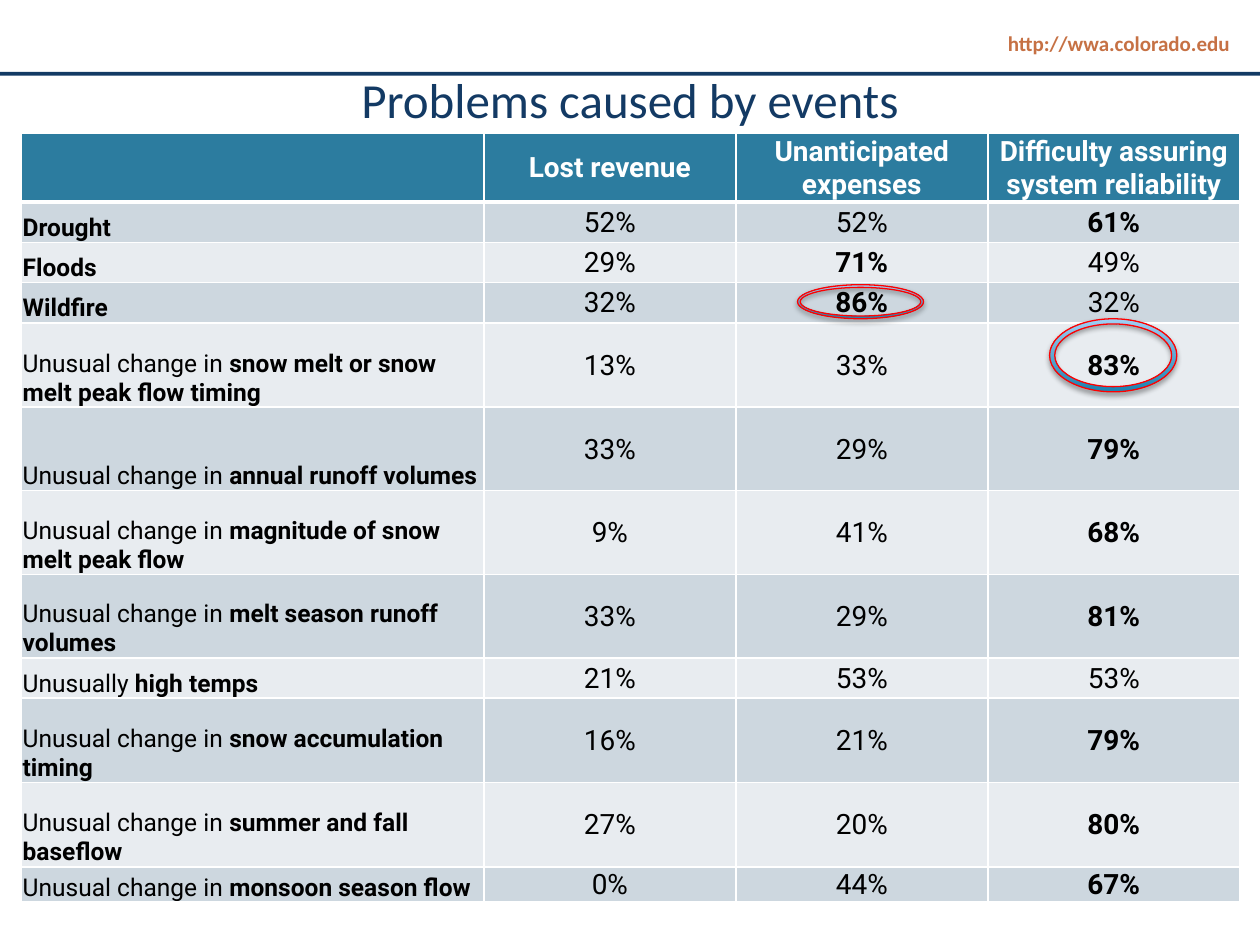
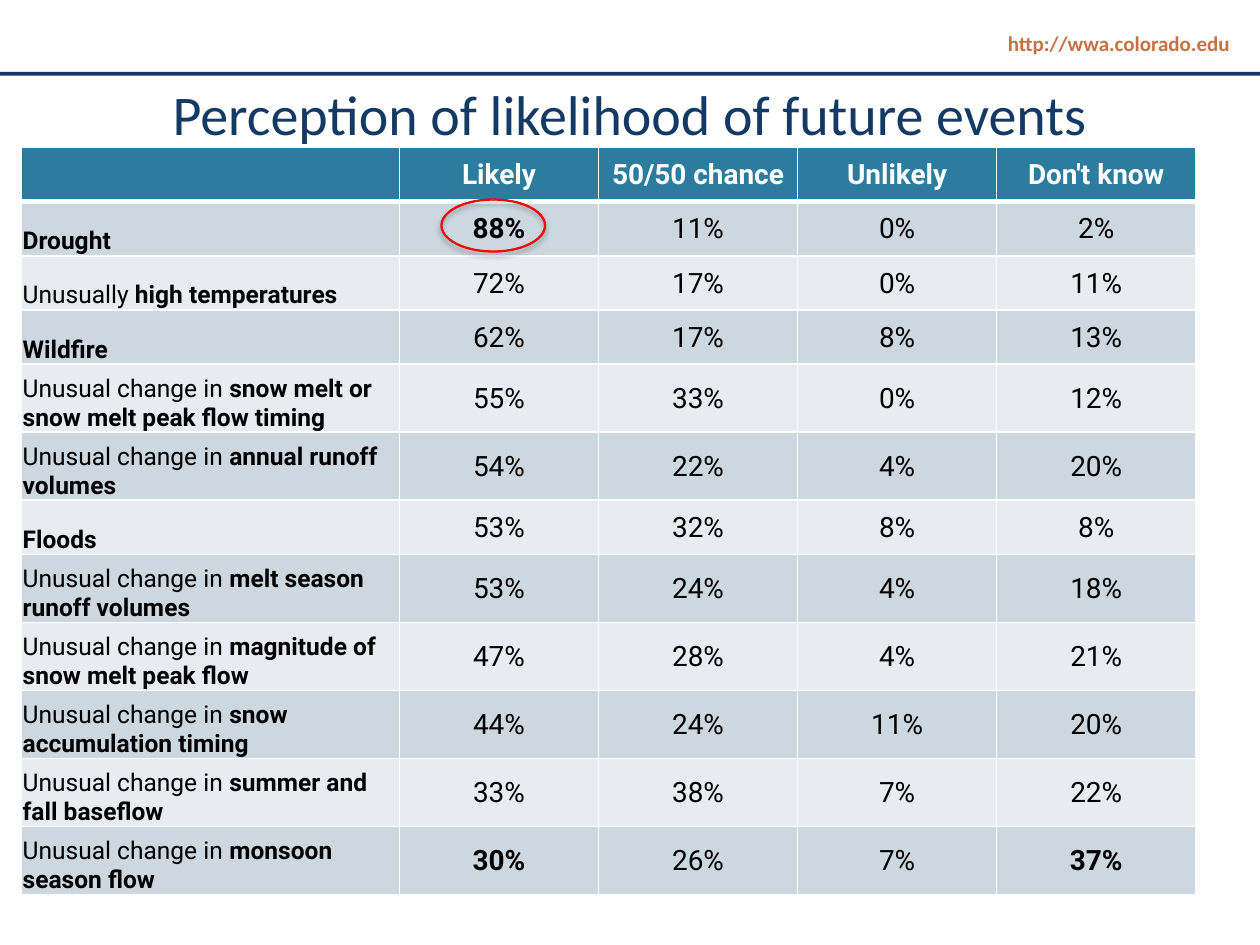
from pptx import Presentation
from pptx.dml.color import RGBColor as RGB
from pptx.enum.shapes import MSO_SHAPE as SHAPE
from pptx.enum.text import MSO_ANCHOR as ANCHOR, PP_ALIGN as ALIGN
from pptx.oxml import parse_xml
from pptx.oxml.ns import nsdecls
from pptx.util import Inches, Pt

NAVY = RGB(0x13, 0x3A, 0x64)
RUST = RGB(0xC6, 0x71, 0x44)
TEAL = RGB(0x2C, 0x7C, 0x9F)
BANDS = RGB(0xCD, 0xD7, 0xDF), RGB(0xE8, 0xEC, 0xF0)
RING_BLUES = RGB(0x1B, 0x83, 0xB0), RGB(0xA0, 0xCF, 0xF4)
RED = RGB(0xFF, 0, 0)
WHITE = RGB(0xFF, 0xFF, 0xFF)
BLACK = RGB(0, 0, 0)
HEAD_FONT, TABLE_FONT = "Calibri", "Roboto"
SITE = "http://wwa.colorado.edu"
CHANGE = "Unusual change in "

# Each row: plain label, bold label, values; a leading * marks a bold value.
SLIDES = [
    {
        "title": "Problems caused by events", "size": 28,
        "title_box": (0.5, 0.5, 9, 5.92),
        "table_at": (0.17, 1.06),
        "cols": [3.67, 2, 2, 2],
        "heights": [0.53] + [0.32] * 3 + [0.67, 0.66] * 2 + [0.32, 0.67, 0.67, 0.28],
        "header": ["Lost revenue", "Unanticipated expenses",
                   "Difficulty assuring system reliability"],
        "rows": [
            ("", "Drought", "52% 52% *61%"),
            ("", "Floods", "29% *71% 49%"),
            ("", "Wildfire", "32% *86% 32%"),
            (CHANGE, "snow melt or snow melt peak flow timing", "13% 33% *83%"),
            (CHANGE, "annual runoff volumes", "33% 29% *79%"),
            (CHANGE, "magnitude of snow melt peak flow", "9% 41% *68%"),
            (CHANGE, "melt season runoff volumes", "33% 29% *81%"),
            ("Unusually ", "high temps", "21% 53% 53%"),
            (CHANGE, "snow accumulation timing", "16% 21% *79%"),
            (CHANGE, "summer and fall baseflow", "27% 20% *80%"),
            (CHANGE, "monsoon season flow", "0% 44% *67%"),
        ],
        "rings": [((6.33, 2.26, 1, 0.27), 0.079), ((8.33, 2.53, 1.01, 0.58), 0.071)],
    },
    {
        "title": "Perception of likelihood of future events", "size": 32,
        "title_box": (0.5, 0.58, 9, 5.83),
        "table_at": (0.17, 1.17),
        "cols": [3] + [1.58] * 4,
        "heights": [0.43] * 4 + [0.54] * 2 + [0.43] + [0.54] * 5,
        "header": ["Likely", "50/50 chance", "Unlikely", "Don't know"],
        "rows": [
            ("", "Drought", "*88% 11% 0% 2%"),
            ("Unusually ", "high temperatures", "72% 17% 0% 11%"),
            ("", "Wildfire", "62% 17% 8% 13%"),
            (CHANGE, "snow melt or snow melt peak flow timing", "55% 33% 0% 12%"),
            (CHANGE, "annual runoff volumes", "54% 22% 4% 20%"),
            ("", "Floods", "53% 32% 8% 8%"),
            (CHANGE, "melt season runoff volumes", "53% 24% 4% 18%"),
            (CHANGE, "magnitude of snow melt peak flow", "47% 28% 4% 21%"),
            (CHANGE, "snow accumulation timing", "44% 24% 11% 20%"),
            (CHANGE, "summer and fall baseflow", "33% 38% 7% 22%"),
            (CHANGE, "monsoon season flow", "*30% 26% 7% *37%"),
        ],
        "rings": [((3.5, 1.58, 0.83, 0.42), 0.018)],
    },
]


def inches(box):
    return [Inches(v) for v in box]


def add_run(p, text, font, size, color, bold=False):
    r = p.add_run()
    r.text = text
    r.font.name, r.font.size, r.font.bold = font, Pt(size), bold
    r.font.color.rgb = color


def add_text(slide, box, text, size, color, align, bold=False):
    tf = slide.shapes.add_textbox(*inches(box)).text_frame
    tf.word_wrap = True
    p = tf.paragraphs[0]
    p.alignment = align
    add_run(p, text, HEAD_FONT, size, color, bold)


def add_frame(slide):
    add_text(slide, (7.05, 0.19, 2.81, 0.3), SITE, 12, RUST, ALIGN.RIGHT, True)
    rule = slide.shapes.add_shape(SHAPE.RECTANGLE, *inches((0, 0.57, 10, 0.03)))
    rule.shadow.inherit = False
    rule.fill.solid()
    rule.fill.fore_color.rgb = NAVY
    rule.line.fill.background()


def style_cell(cell, fill, top, bottom):
    cell.fill.solid()
    cell.fill.fore_color.rgb = fill
    tc_pr = cell._tc.get_or_add_tcPr()
    for i, (side, width) in enumerate(zip("LRTB", (1, 1, top, bottom))):
        tc_pr.insert(i, parse_xml(
            f'<a:ln{side} {nsdecls("a")} w="{Pt(width)}"><a:solidFill>'
            f'<a:srgbClr val="{WHITE}"/></a:solidFill></a:ln{side}>'))


def fill_cell(cell, runs, size, color, align, anchor):
    cell.margin_left = cell.margin_right = cell.margin_top = Inches(0.01)
    cell.margin_bottom = 0
    cell.vertical_anchor = anchor
    p = cell.text_frame.paragraphs[0]
    p.alignment = align
    for text, bold in runs:
        if text:
            add_run(p, text, TABLE_FONT, size, color, bold)


def add_event_table(slide, data):
    cols, heights = data["cols"], data["heights"]
    box = (*data["table_at"], sum(cols), sum(heights))
    table = slide.shapes.add_table(len(heights), len(cols), *inches(box)).table
    table.horz_banding = False
    for col, width in zip(table.columns, cols):
        col.width = Inches(width)
    for i, height in enumerate(heights):
        table.rows[i].height = Inches(height)
        for cell in table.rows[i].cells:
            style_cell(cell, BANDS[(i - 1) % 2] if i else TEAL,
                       3 if i == 1 else 1, 3 if i == 0 else 1)
    for j, text in enumerate(data["header"], 1):
        fill_cell(table.cell(0, j), [(text, True)], 16, WHITE, ALIGN.CENTER, ANCHOR.MIDDLE)
    for i, (plain, strong, values) in enumerate(data["rows"], 1):
        fill_cell(table.cell(i, 0), [(plain, False), (strong, True)], 14, BLACK,
                  ALIGN.LEFT, ANCHOR.BOTTOM)
        for j, value in enumerate(values.split(), 1):
            fill_cell(table.cell(i, j), [(value.lstrip("*"), value.startswith("*"))], 16,
                      BLACK, ALIGN.CENTER, ANCHOR.MIDDLE)


def add_ring(slide, box, thickness):
    sp = slide.shapes.add_shape(SHAPE.DONUT, *inches(box))
    sp.adjustments[0] = thickness
    sp.fill.gradient()
    sp.fill.gradient_angle = 90
    for stop, color, position in zip(sp.fill.gradient_stops, RING_BLUES, (0, 1)):
        stop.color.rgb = color
        stop.position = position
    sp.line.color.rgb = RED
    sp.line.width = Pt(0.75)
    sp.shadow.inherit = False
    effects = sp._element.spPr.find("{*}effectLst")
    effects.append(parse_xml(
        f'<a:outerShdw {nsdecls("a")} blurRad="{Pt(3.1)}" dist="{Pt(1.8)}" dir="5400000" '
        f'rotWithShape="0"><a:srgbClr val="{BLACK}"><a:alpha val="35000"/></a:srgbClr>'
        '</a:outerShdw>'))


def main():
    prs = Presentation()
    prs.slide_width, prs.slide_height = Inches(10), Inches(7.5)
    for data in SLIDES:
        slide = prs.slides.add_slide(prs.slide_layouts[6])
        add_frame(slide)
        add_text(slide, data["title_box"], data["title"], data["size"], NAVY, ALIGN.CENTER)
        add_event_table(slide, data)
        for box, thickness in data["rings"]:
            add_ring(slide, box, thickness)
    prs.save("out.pptx")


if __name__ == "__main__":
    main()
